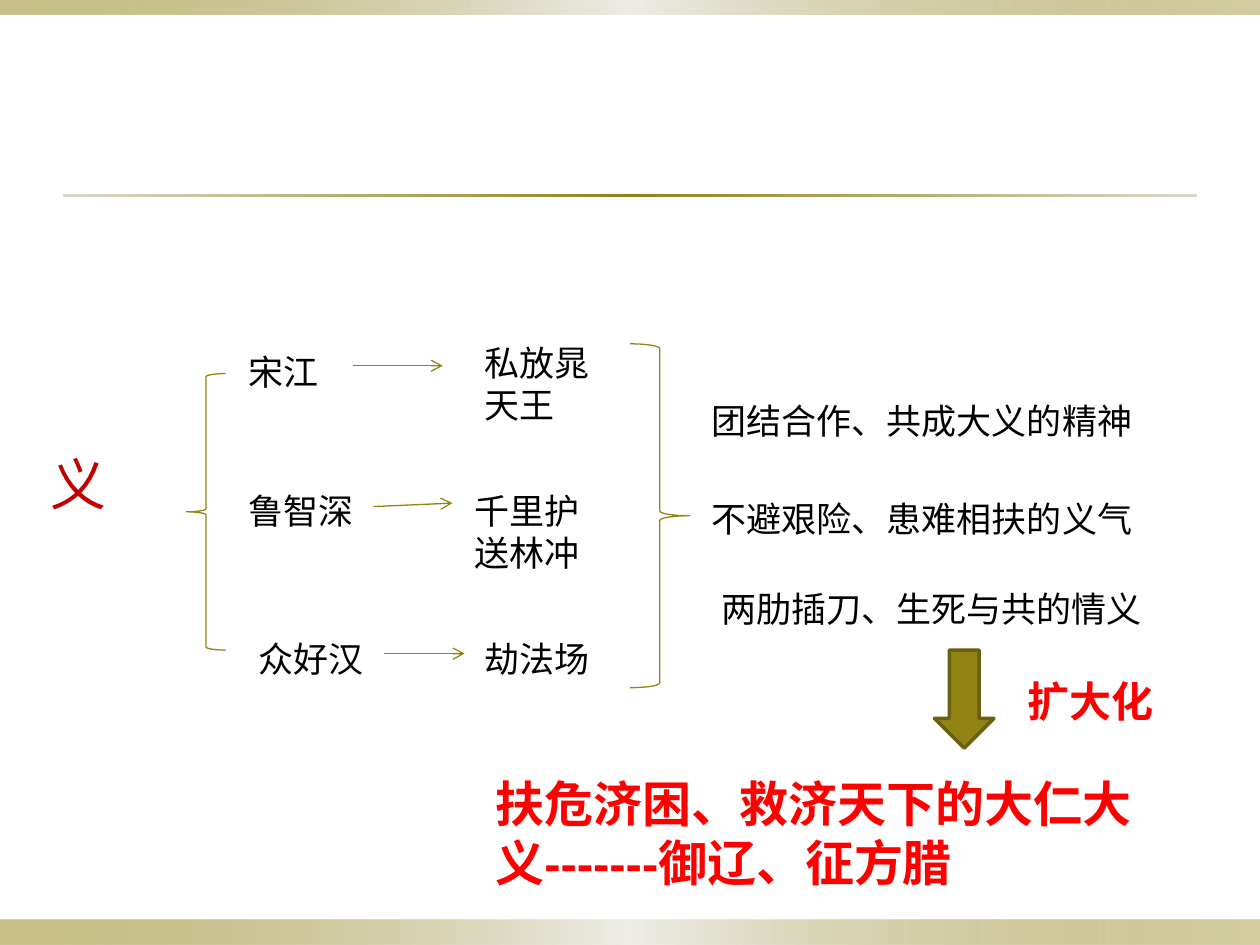
from lxml import etree
from pptx import Presentation
from pptx.dml.color import RGBColor
from pptx.enum.shapes import MSO_CONNECTOR as Connector, MSO_SHAPE as Shape
from pptx.oxml.ns import qn
from pptx.util import Pt

WIDTH, HEIGHT = 720, 540
OLIVE, DARK_OLIVE, PALE = "918415", "6A600F", "EEEDE8"
RULE_END, BLACK, RED, DARK_RED = "DBD8CB", "000000", "FF0000", "C00000"


def color(value):
    return RGBColor.from_string(value)


def add_text(slide, text, left, top, width, height, size=20, font="Arial", ink=BLACK, bold=False):
    frame = slide.shapes.add_textbox(Pt(left), Pt(top), Pt(width), Pt(height)).text_frame
    frame.word_wrap = True
    run = frame.paragraphs[0].add_run()
    run.text = text
    run.font.size, run.font.name, run.font.bold = Pt(size), font, bold
    run.font.color.rgb = color(ink)


def add_preset(slide, kind, left, top, width, height, fill=None, line=None, weight=0.75, adjust=()):
    shape = slide.shapes.add_shape(kind, Pt(left), Pt(top), Pt(width), Pt(height))
    shape.shadow.inherit = False
    for index, value in enumerate(adjust):
        shape.adjustments[index] = value
    if fill:
        shape.fill.solid()
        shape.fill.fore_color.rgb = color(fill)
    else:
        shape.fill.background()
    if line:
        shape.line.color.rgb = color(line)
        shape.line.width = Pt(weight)
    else:
        shape.line.fill.background()
    return shape


def add_gradient_bar(slide, left, top, width, height, stops):
    """Stops are (position, colour, opacity), all in percent, from left to right."""
    shape = add_preset(slide, Shape.RECTANGLE, left, top, width, height)
    shape.fill.gradient()
    shape.fill.gradient_angle = 0
    stop_list = shape.fill._fill._gradFill.find(qn("a:gsLst"))
    for stop in list(stop_list):
        stop_list.remove(stop)
    for position, value, opacity in stops:
        stop = etree.SubElement(stop_list, qn("a:gs"), pos=str(position * 1000))
        stop_color = etree.SubElement(stop, qn("a:srgbClr"), val=value)
        if opacity < 100:
            etree.SubElement(stop_color, qn("a:alpha"), val=str(opacity * 1000))


def add_arrow(slide, start_x, start_y, end_x, end_y):
    arrow = slide.shapes.add_connector(
        Connector.STRAIGHT, Pt(start_x), Pt(start_y), Pt(end_x), Pt(end_y))
    arrow.line.color.rgb = color(OLIVE)
    arrow.line.width = Pt(0.75)
    etree.SubElement(arrow.line._get_or_add_ln(), qn("a:tailEnd"), type="arrow")
    etree.SubElement(arrow._element.spPr, qn("a:effectLst"))


def add_frame(slide):
    band = [(0, OLIVE, 50), (50, PALE, 100), (100, OLIVE, 40)]
    rule = [(0, RULE_END, 100), (50, OLIVE, 100), (100, RULE_END, 100)]
    add_gradient_bar(slide, 0, HEIGHT - 14.4, WIDTH, 14.4, band)
    add_gradient_bar(slide, 0, 0, WIDTH, 8.5, band)
    add_gradient_bar(slide, 36, 110.8, WIDTH - 72, 1.6, rule)


def add_heroes(slide, left, top):
    """The theme word, a brace, and each hero with an arrow to his deed."""
    add_text(slide, "义", left, top + 57, 60, 48, size=32, font="Lato", ink=DARK_RED)
    add_preset(slide, Shape.LEFT_BRACE, left + 84.5, top + 17, 22.5, 158,
               line=OLIVE, adjust=(0.08, 0.5))
    # Hero, indent and width; arrow start, end and rise; deed, indent, lift and width
    rows = [
        ("宋江", 0, 56, 67, 118, 0, "私放晁天王", 135, 5, 84),
        ("鲁智深", 0, 84, 78.5, 123.5, 2, "千里护送林冲", 129, 0, 84),
        ("众好汉", 5.5, 84, 84.5, 130.5, 0, "劫法场", 135, 0, 101),
    ]
    names_left = left + 113
    for index, row in enumerate(rows):
        hero, indent, hero_width, start, end, rise, deed, deed_indent, lift, deed_width = row
        row_top = top + (0, 79.5, 164)[index]
        arrow_y = row_top + 12.5
        add_text(slide, hero, names_left + indent, row_top, hero_width, 27)
        add_arrow(slide, names_left + start, arrow_y + rise / 2 + (0, 0, 0.5)[index],
                  names_left + end, arrow_y - rise / 2 + (0, 0, 0.5)[index])
        add_text(slide, deed, names_left + deed_indent, row_top - lift, deed_width, 27)


def add_virtues(slide, left, top):
    """A brace that gathers the deeds, and the virtues they show."""
    add_preset(slide, Shape.RIGHT_BRACE, left, top, 34, 196.5, line=OLIVE, adjust=(0.08, 0.5))
    virtues = [
        ("团结合作、共成大义的精神", 39.5, 28),
        ("不避艰险、患难相扶的义气", 39.5, 84.5),
        ("两肋插刀、生死与共的情义", 45, 135.5),
    ]
    for text, indent, drop in virtues:
        add_text(slide, text, left + indent, top + drop, 286, 27)


def add_conclusion(slide, left, top):
    add_preset(slide, Shape.DOWN_ARROW, left + 258, top, 34, 56,
               fill=OLIVE, line=DARK_OLIVE, weight=2, adjust=(0.5, 0.5))
    add_text(slide, "扩大化", left + 304, top + 11, 101, 30, size=24, ink=RED, bold=True)
    add_text(slide, "扶危济困、救济天下的大仁大义-------御辽、征方腊",
             left, top + 67, 424, 75, size=28, ink=RED, bold=True)


def main():
    presentation = Presentation()
    presentation.slide_width, presentation.slide_height = Pt(WIDTH), Pt(HEIGHT)
    slide = presentation.slides.add_slide(presentation.slide_layouts[6])
    add_frame(slide)
    add_heroes(slide, 22, 196.5)
    add_virtues(slide, 360, 196.5)
    add_conclusion(slide, 276, 371.5)
    presentation.save("out.pptx")


if __name__ == "__main__":
    main()
